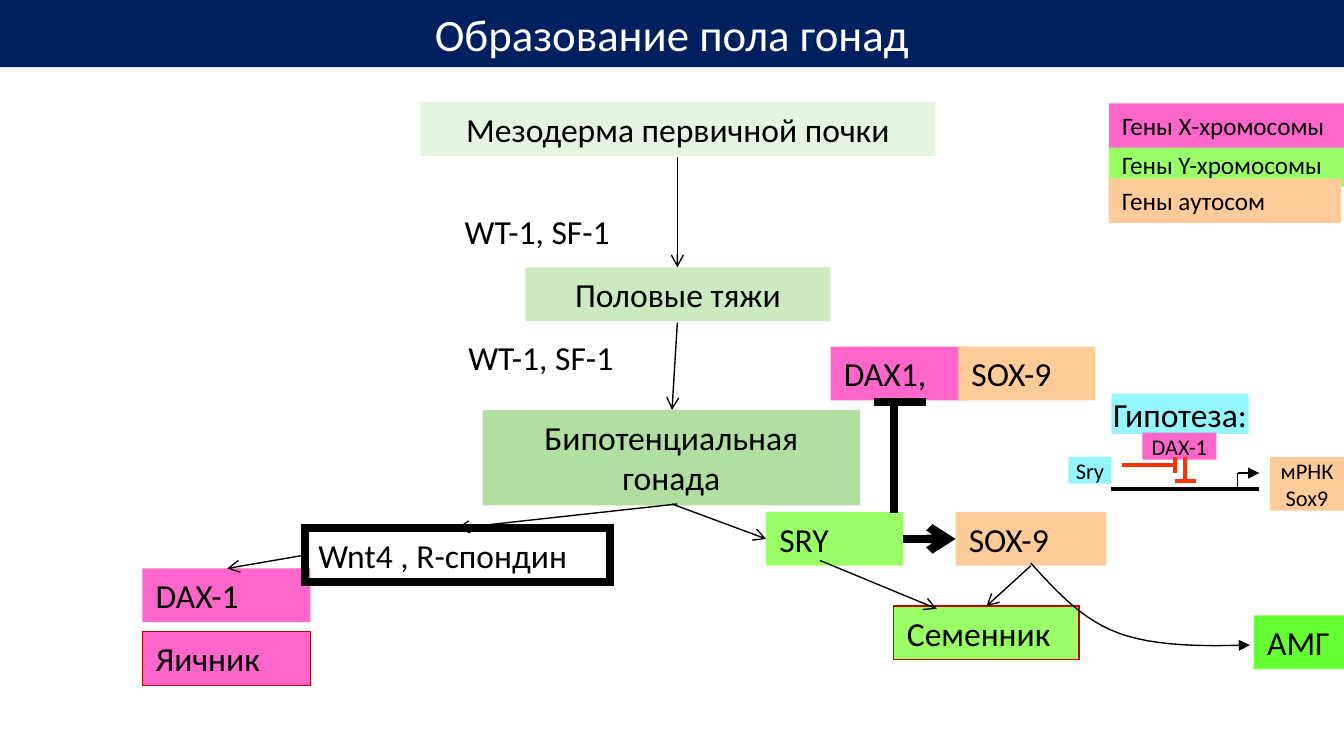
from dataclasses import dataclass

import pptx
import pptx.dml.color
import pptx.enum.shapes
import pptx.enum.text
import pptx.oxml
import pptx.oxml.ns
import pptx.util
from pptx.util import Inches

BLACK, WHITE, NAVY, DARK_RED, RED = "000000", "FFFFFF", "002060", "C00000", "FF3300"
X_GENE, Y_GENE, AUTOSOME, CYAN = "FF66CC", "99FF66", "FFCC99", "94F5FA"


@dataclass
class Box:
    text: str
    left: float
    top: float
    width: float
    height: float = 0.4
    fill: str | None = None
    size: float = 18
    centered: bool = False
    color: str = BLACK
    border: str | None = None
    border_width: float = 0.75
    tight: bool = False


@dataclass
class Line:
    x1: float
    y1: float
    x2: float
    y2: float
    head: str | None = None
    width: float = 0.75
    color: str = BLACK


BOXES = [
    Box("Мезодерма первичной почки", 3.13, 0.76, 3.83, fill="E5F4E0", centered=True),
    Box("Половые тяжи", 3.91, 1.99, 2.27, fill="CBEAC0", centered=True),
    Box("Бипотенциальная гонада", 3.59, 3.05, 2.81, 0.71, "B0DFA1", centered=True),
    Box("Яичник", 1.06, 4.7, 1.25, fill=X_GENE, border=DARK_RED),
    Box("Семенник", 6.65, 4.51, 1.38, fill=Y_GENE, border=DARK_RED),
    Box("WT-1, SF-1", 3.36, 1.52, 1.33, fill=WHITE),
    Box("WT-1, SF-1", 3.36, 2.46, 1.33, fill=WHITE, centered=True),
    Box("DAX1,", 6.18, 2.58, 1.02, fill=X_GENE),
    Box("DAX-1", 1.06, 4.23, 1.25, fill=X_GENE),
    Box("SRY", 5.7, 3.81, 1.02, fill=Y_GENE),
    Box("SOX-9", 7.11, 3.81, 1.12, fill=AUTOSOME),
    Box("Гены Y-хромосомы", 8.25, 1.06, 1.77, 0.33, Y_GENE, 13.5),
    Box("Wnt4 , R-спондин", 2.27, 3.93, 2.27, border=BLACK, border_width=4.5),
    Box("Гены Х-хромосомы", 8.25, 0.77, 1.75, 0.33, X_GENE, 13.5),
    Box("Гены аутосом", 8.25, 1.33, 1.73, 0.33, AUTOSOME, 13.5),
    Box("Образование пола гонад", 0, 0, 10, 0.5, NAVY, 24, True, WHITE),
    Box("SOX-9", 7.13, 2.58, 1.02, fill=AUTOSOME),
    Box("Гипотеза:", 8.27, 2.93, 1.02, 0.3, CYAN, centered=True, tight=True),
    Box("мРНК Sox9", 9.45, 3.4, 0.55, 0.4, AUTOSOME, 12, True, tight=True),
    Box("DAX-1", 8.5, 3.22, 0.55, 0.2, X_GENE, 12, True, tight=True),
    Box("Sry", 7.95, 3.4, 0.32, 0.2, CYAN, 12, True, tight=True),
    Box("АМГ", 9.33, 4.58, 0.67, fill="66FF33"),
]

LINES = [
    Line(5.04, 1.17, 5.04, 1.99, "arrow"),
    Line(5.04, 2.4, 5, 3.05, "arrow"),
    Line(5, 3.75, 5.7, 4.01, "arrow"),
    Line(5.04, 3.75, 3.4, 3.93, "arrow"),
    Line(2.27, 4.13, 1.69, 4.23, "arrow"),
    Line(7.67, 4.21, 7.34, 4.51, "arrow"),
    Line(6.1, 4.17, 6.97, 4.53, "arrow"),
    Line(6.72, 4.01, 7.11, 4.01, "arrow", 4.5),
    Line(6.65, 3.82, 6.65, 2.99, width=4.5),
    Line(6.5, 2.99, 6.89, 2.99, width=4.5),
    Line(8.27, 3.64, 9.37, 3.64, width=2.25),
    Line(9.21, 3.64, 9.21, 3.52),
    Line(9.21, 3.52, 9.37, 3.52, "triangle"),
    Line(8.82, 3.4, 8.82, 3.58, width=2.25, color=RED),
    Line(8.74, 3.58, 8.9, 3.58, width=2.25, color=RED),
    Line(8.35, 3.46, 8.74, 3.46, width=2.25, color=RED),
    Line(8.74, 3.4, 8.74, 3.52, width=2.25, color=RED),
]

AMH_CURVE = [
    [(7.67, 4.19), (7.86, 4.4), (8.05, 4.61), (8.32, 4.71)],
    [(8.32, 4.71), (8.59, 4.81), (8.95, 4.81), (9.3, 4.8)],
]


def rgb(value: str) -> pptx.dml.color.RGBColor:
    return pptx.dml.color.RGBColor.from_string(value)


def add_xml(parent, tag: str, attributes: str = "") -> None:
    ns = pptx.oxml.ns.nsdecls("a")
    parent.append(pptx.oxml.parse_xml(f"<a:{tag} {ns} {attributes}/>"))


def set_line(sp, color: str, width: float, head: str | None = None) -> None:
    sp.line.color.rgb = rgb(color)
    sp.line.width = pptx.util.Pt(width)
    ln = sp.line._get_or_add_ln()
    add_xml(ln, "miter", 'lim="800000"')
    if head:
        add_xml(ln, "tailEnd", f'type="{head}"')


def draw_box(shapes, box: Box) -> None:
    sp = shapes.add_textbox(Inches(box.left), Inches(box.top),
                            Inches(box.width), Inches(box.height))
    if box.fill:
        sp.fill.solid()
        sp.fill.fore_color.rgb = rgb(box.fill)
    if box.border:
        set_line(sp, box.border, box.border_width)
    tf = sp.text_frame
    tf.word_wrap = True
    if box.tight:
        tf.margin_left = tf.margin_right = tf.margin_top = tf.margin_bottom = 0
    p = tf.paragraphs[0]
    p.text = box.text
    if box.centered:
        p.alignment = pptx.enum.text.PP_ALIGN.CENTER
    p.font.name = "Calibri"
    p.font.size = pptx.util.Pt(box.size)
    p.font.color.rgb = rgb(box.color)


def draw_line(shapes, line: Line) -> None:
    sp = shapes.add_connector(pptx.enum.shapes.MSO_CONNECTOR.STRAIGHT,
                              Inches(line.x1), Inches(line.y1),
                              Inches(line.x2), Inches(line.y2))
    set_line(sp, line.color, line.width, line.head)
    add_xml(sp._element.spPr, "effectLst")


def bezier(points: list[tuple[float, float]], t: float) -> tuple[int, int]:
    weights = [(1 - t) ** 3, 3 * t * (1 - t) ** 2, 3 * t ** 2 * (1 - t), t ** 3]
    x, y = (sum(w * pt[axis] for w, pt in zip(weights, points)) for axis in (0, 1))
    return Inches(x), Inches(y)


def draw_curve(shapes, curve: list[list[tuple[float, float]]], steps: int = 12) -> None:
    builder = shapes.build_freeform(*bezier(curve[0], 0))
    builder.add_line_segments(
        [bezier(part, i / steps) for part in curve for i in range(1, steps + 1)],
        close=False)
    sp = builder.convert_to_shape()
    sp.fill.background()
    sp.shadow.inherit = False
    set_line(sp, BLACK, 0.75, "triangle")


def main() -> None:
    prs = pptx.Presentation()
    prs.slide_width = Inches(10)
    prs.slide_height = prs.slide_width * 9 // 16
    s = prs.slides.add_slide(prs.slide_layouts[6])
    for box in BOXES:
        draw_box(s.shapes, box)
    for line in LINES:
        draw_line(s.shapes, line)
    draw_curve(s.shapes, AMH_CURVE)
    prs.save("out.pptx")


if __name__ == "__main__":
    main()
